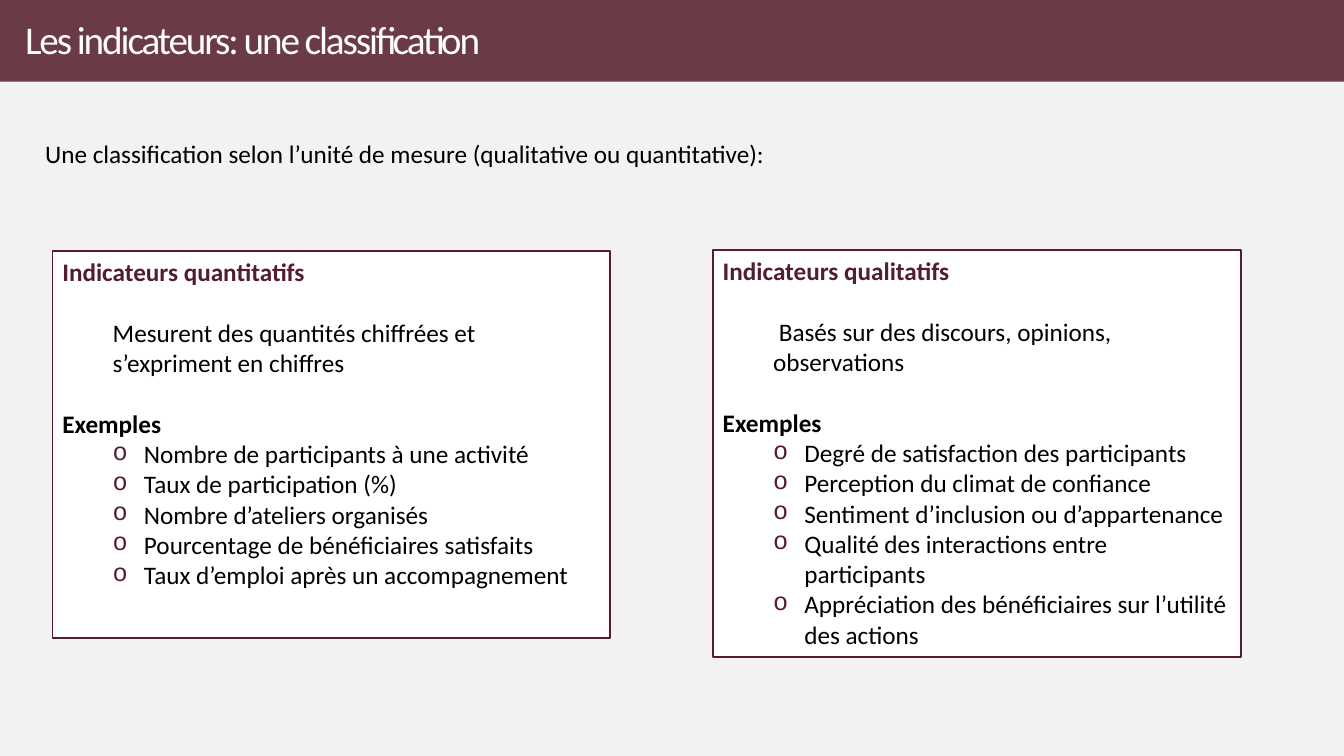
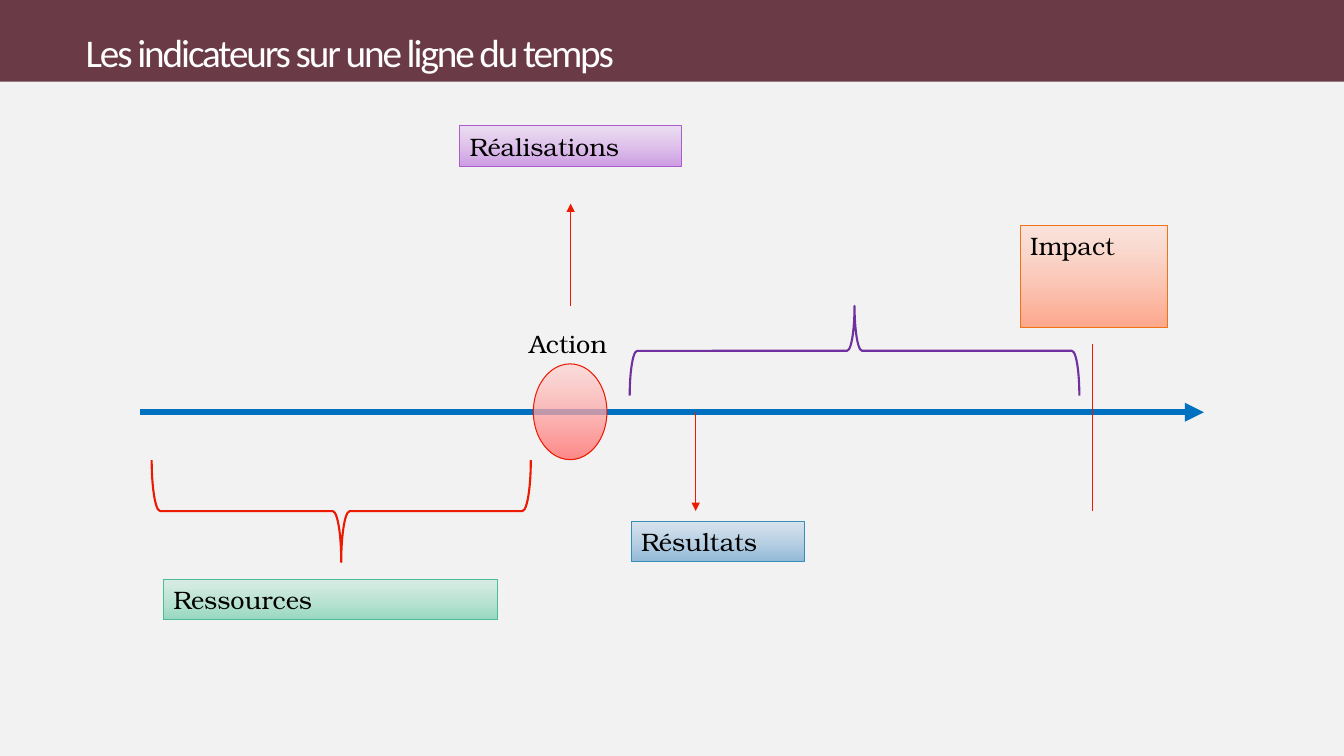
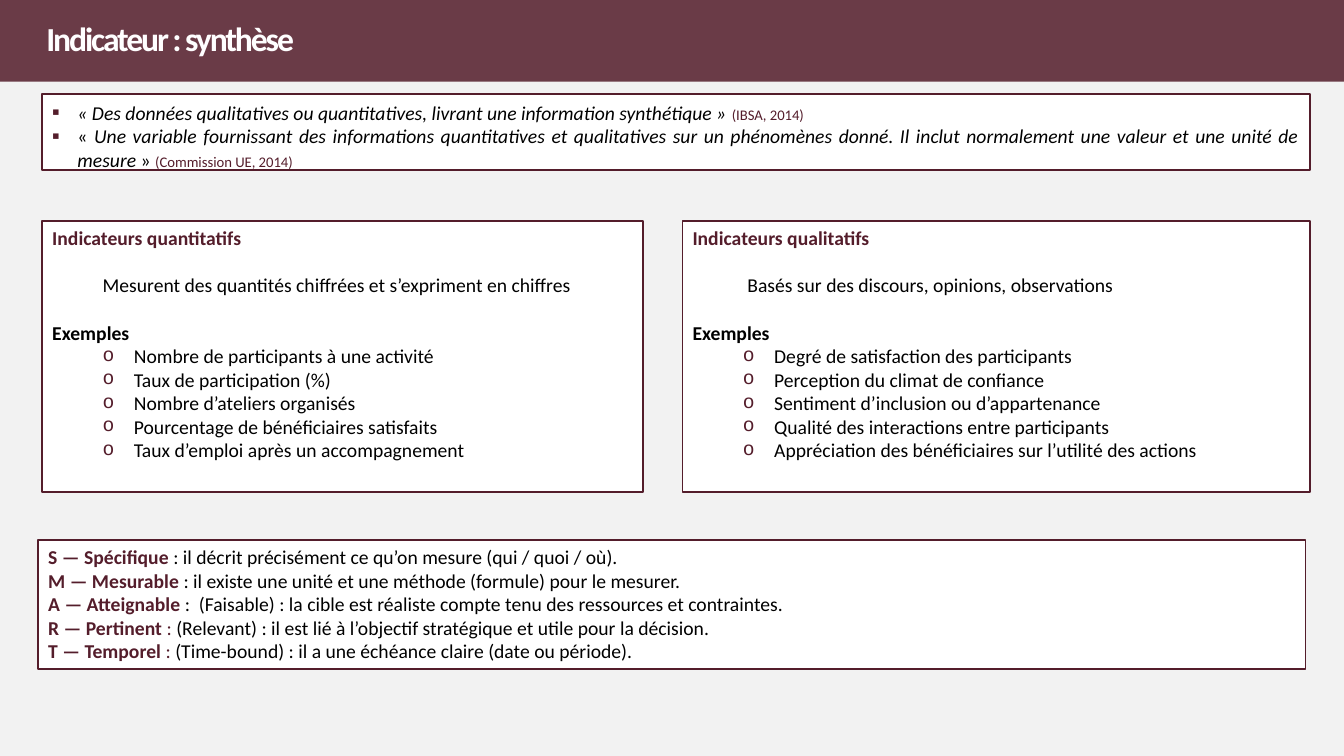
"""Build three slides on indicators: classes, timeline and summary."""
from lxml.etree import SubElement
from pptx import Presentation
from pptx.dml.color import RGBColor
from pptx.enum.shapes import MSO_CONNECTOR, MSO_SHAPE
from pptx.enum.text import MSO_ANCHOR, PP_ALIGN
from pptx.oxml.ns import qn
from pptx.util import Inches, Pt

COLORS = {
    "page": "F2F2F2", "band": "6A3B47", "wine": "541D2B",
    "white": "FFFFFF", "title": "FFFEFF", "black": "000000",
    "blue": "0070C0", "violet": "7030A0",
    "red": "ED1A02", "red_top": "FFCECD", "red_end": "FF807F",
    "green": "4CBB98", "green_top": "CAEADD", "green_end": "8ED6BB",
    "mauve": "AD5CCB", "mauve_top": "E7D1F1", "mauve_end": "CA94E2",
    "sky": "388EBB", "sky_top": "C6D9EA", "sky_end": "88B4D6",
    "orange": "F17214", "orange_top": "FFDAD0", "orange_end": "FFA182",
}
SERIF = "TeX Gyre Bonum"
QUANT = ("Indicateurs quantitatifs",
         "Mesurent des quantités chiffrées et s’expriment en chiffres",
         ["Nombre de participants à une activité",
          "Taux de participation (%)",
          "Nombre d’ateliers organisés",
          "Pourcentage de bénéficiaires satisfaits",
          "Taux d’emploi après un accompagnement"])
QUAL = ("Indicateurs qualitatifs",
        " Basés sur des discours, opinions, observations",
        ["Degré de satisfaction des participants",
         "Perception du climat de confiance",
         "Sentiment d’inclusion ou d’appartenance",
         "Qualité des interactions entre participants",
         "Appréciation des bénéficiaires sur l’utilité des actions"])
SMART = [
    ("S — Spécifique ", "",
     ": il décrit précisément ce qu’on mesure (qui / quoi / où)."),
    ("M — Mesurable ", "",
     ": il existe une unité et une méthode (formule) pour le mesurer."),
    ("A — Atteignable ", "",
     ":  (Faisable) : la cible est réaliste compte tenu des ressources et contraintes."),
    ("R — Pertinent ", ": ",
     "(Relevant) : il est lié à l’objectif stratégique et utile pour la décision."),
    ("T — Temporel", " : ",
     "(Time-bound) : il a une échéance claire (date ou période)."),
]


def rgb(name):
    return RGBColor.from_string(COLORS[name])


def bullet(props, char, font, scale):
    tint = SubElement(props, qn("a:buClr"))
    SubElement(tint, qn("a:srgbClr")).set("val", COLORS["wine"])
    SubElement(props, qn("a:buSzPct")).set("val", str(scale * 1000))
    SubElement(props, qn("a:buFont")).set("typeface", font)
    SubElement(props, qn("a:buChar")).set("char", char)


def write(frame, *runs, size=18, font="Calibri", color="black", bold=False,
          italic=False, lead=0, left=0, hang=0, mark=None, ratio=None,
          align=PP_ALIGN.LEFT, track=0):
    para = frame.paragraphs[0]
    if para.runs:
        para = frame.add_paragraph()
    props = para._p.get_or_add_pPr()
    props.set("marL", str(Inches(left)))
    props.set("indent", str(Inches(-hang)))
    if mark:
        bullet(props, *mark)
    para.alignment = align
    para.space_before = Pt(lead)
    if ratio:
        para.line_spacing = ratio
    for item in runs:
        words, style = item if isinstance(item, tuple) else (item, {})
        run = para.add_run()
        run.text = words
        run.font.name = font
        run.font.size = Pt(style.get("size", size))
        run.font.bold = style.get("bold", bold)
        run.font.italic = style.get("italic", italic)
        run.font.color.rgb = rgb(style.get("color", color))
        if track:
            run._r.get_or_add_rPr().set("spc", str(track))


def setup(frame, anchor=MSO_ANCHOR.TOP, pad=None):
    frame.word_wrap = True
    frame.vertical_anchor = anchor
    if pad is not None:
        frame.margin_left = frame.margin_right = Inches(pad)
        frame.margin_top = frame.margin_bottom = Inches(pad)
    return frame


def label(slide, spot, **kind):
    box = slide.shapes.add_textbox(*map(Inches, spot))
    return setup(box.text_frame, **kind)


def shape(slide, spot, kind=MSO_SHAPE.RECTANGLE, fill=None, line=None, width=1.25):
    item = slide.shapes.add_shape(kind, *map(Inches, spot))
    item.shadow.inherit = False
    if fill:
        item.fill.solid()
        item.fill.fore_color.rgb = rgb(fill)
    else:
        item.fill.background()
    if line:
        item.line.color.rgb = rgb(line)
        item.line.width = Pt(width)
    else:
        item.line.fill.background()
    setup(item.text_frame)
    return item


def panel(slide, spot):
    return shape(slide, spot, fill="white", line="wine").text_frame


def shade(slide, spot, hue, kind=MSO_SHAPE.RECTANGLE):
    item = shape(slide, spot, kind, line=hue, width=0.75)
    item.fill.gradient()
    item.fill.gradient_angle = 270
    for stop, end in zip(item.fill.gradient_stops, ("_top", "_end")):
        stop.color.rgb = rgb(hue + end)
    grad = item.element.spPr.find(qn("a:gradFill"))
    for tint, alpha in zip(grad.iter(qn("a:srgbClr")), (60, 92)):
        SubElement(tint, qn("a:alpha")).set("val", str(alpha * 1000))
    return item.text_frame


def brace(slide, spot, turn, color):
    item = shape(slide, spot, MSO_SHAPE.LEFT_BRACE, line=color, width=1.5)
    item.rotation = turn


def link(slide, start, end, color="red", width=0.75, head=True):
    line = slide.shapes.add_connector(
        MSO_CONNECTOR.STRAIGHT, *map(Inches, start + end))
    line.line.color.rgb = rgb(color)
    line.line.width = Pt(width)
    if head:
        SubElement(line.line._get_or_add_ln(), qn("a:tailEnd")).set("type", "triangle")
    SubElement(line.element.spPr, qn("a:effectLst"))


def page(deck, title, spot, **style):
    slide = deck.slides.add_slide(deck.slide_layouts[6])
    slide.background.fill.solid()
    slide.background.fill.fore_color.rgb = rgb("page")
    shape(slide, (0, 0, 13.33, 0.81), fill="band")
    frame = label(slide, spot, anchor=MSO_ANCHOR.MIDDLE, pad=0.25)
    write(frame, title, **{"size": 28, "color": "title", "ratio": 0.85,
                           "track": -150, **style})
    return slide


def card(slide, spot, content, size):
    head, about, items = content
    frame = panel(slide, spot)
    gap = size * 1.22
    write(frame, head, size=size, color="wine", bold=True)
    write(frame, about, size=size, left=0.5, lead=gap)
    write(frame, "Exemples", size=size, bold=True, lead=gap)
    for item in items:
        write(frame, item, size=size, left=0.81, hang=0.31,
              mark=("o", "Courier New", 100))


def classes(deck):
    slide = page(deck, "Les indicateurs: une classification", (0, 0.02, 13.33, 0.8))
    write(label(slide, (0.35, 1.26, 12.6, 0.5)),
          "Une classification selon l’unité de mesure (qualitative ou quantitative):",
          ratio=1.2)
    card(slide, (0.52, 2.49, 5.53, 3.84), QUANT, 18)
    card(slide, (7.07, 2.48, 5.24, 4.04), QUAL, 18)


def timeline(deck):
    slide = page(deck, "Les indicateurs sur une ligne du temps", (0.6, 0.02, 11.3, 1.07))
    axis = 4.09
    link(slide, (1.39, axis), (11.94, axis), "blue", 4.5)
    shade(slide, (5.29, 3.61, 0.73, 0.95), "red", MSO_SHAPE.OVAL)
    write(label(slide, (5.15, 3.21, 1.1, 0.4)), "Action", font=SERIF)
    brace(slide, (2.88, 3.19, 1.01, 3.76), 270, "red")
    brace(slide, (8.03, 1.25, 0.89, 4.46), 90, "violet")
    link(slide, (5.66, 3.04), (5.66, 2.02))
    link(slide, (6.9, axis), (6.9, 5.07))
    link(slide, (10.84, 3.41), (10.84, 5.07), head=False)
    for words, spot, hue in (
            ("Ressources", (1.62, 5.75, 3.31, 0.4), "green"),
            ("Réalisations", (4.56, 1.25, 2.2, 0.4), "mauve"),
            ("Résultats", (6.26, 5.17, 1.72, 0.4), "sky"),
            ("Impact", (10.12, 2.24, 1.46, 1.01), "orange")):
        write(shade(slide, spot, hue), words, font=SERIF)


def summary(deck):
    slide = page(deck, "Indicateur : synthèse", (0.21, 0, 13.12, 0.81),
                 size=24, bold=True)
    quotes = panel(slide, (0.42, 0.93, 12.57, 0.76))
    quotes.margin_top = Inches(0.07)
    quotes.margin_bottom = Inches(0)
    cite = {"size": 10.5, "color": "wine", "italic": False}
    plain = {"italic": False}
    for runs in (
            ["« Des données qualitatives ou quantitatives, livrant une information synthétique » ",
             ("(IBSA, 2014)", cite)],
            [("« ", plain),
             "Une variable fournissant des informations quantitatives et qualitatives sur un "
             "phénomènes donné. Il inclut normalement une valeur et une unité de mesure ",
             ("» ", plain), ("(Commission UE, 2014)", cite)]):
        write(quotes, *runs, size=14, italic=True, left=0.25, hang=0.25,
              mark=("▪", "Calibri", 110), align=PP_ALIGN.JUSTIFY)
    card(slide, (0.42, 2.19, 5.96, 2.69), QUANT, 14)
    card(slide, (6.77, 2.19, 6.22, 2.69), QUAL, 14)
    smart = panel(slide, (0.38, 5.36, 12.57, 1.28))
    for name, colon, rest in SMART:
        runs = [(name, {"color": "wine", "bold": True})]
        if colon:
            runs.append((colon, {"color": "wine"}))
        write(smart, *runs, rest, size=14)


def main():
    deck = Presentation()
    deck.slide_width = Inches(13.33)
    deck.slide_height = Inches(7.5)
    classes(deck)
    timeline(deck)
    summary(deck)
    deck.save("out.pptx")


if __name__ == "__main__":
    main()
